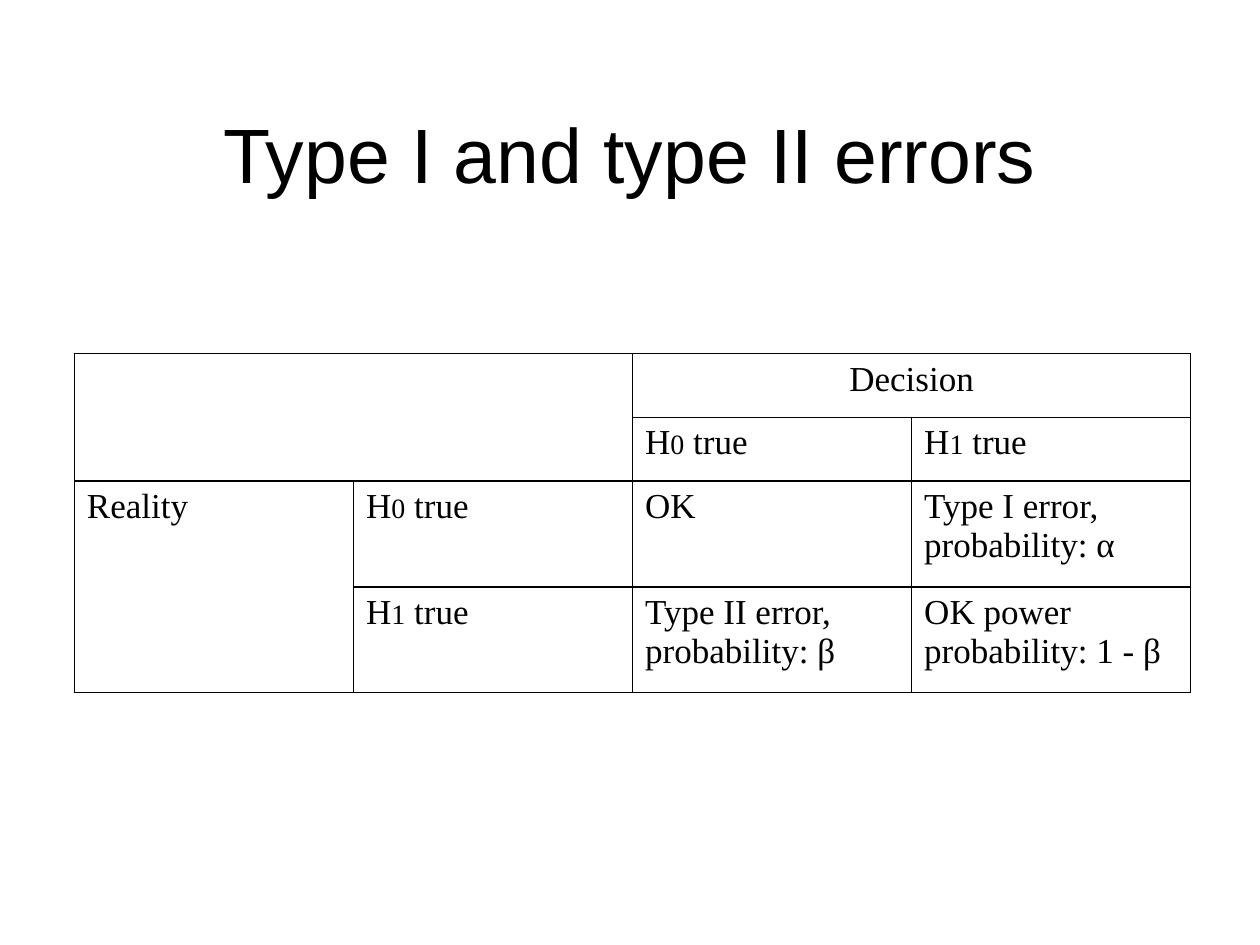
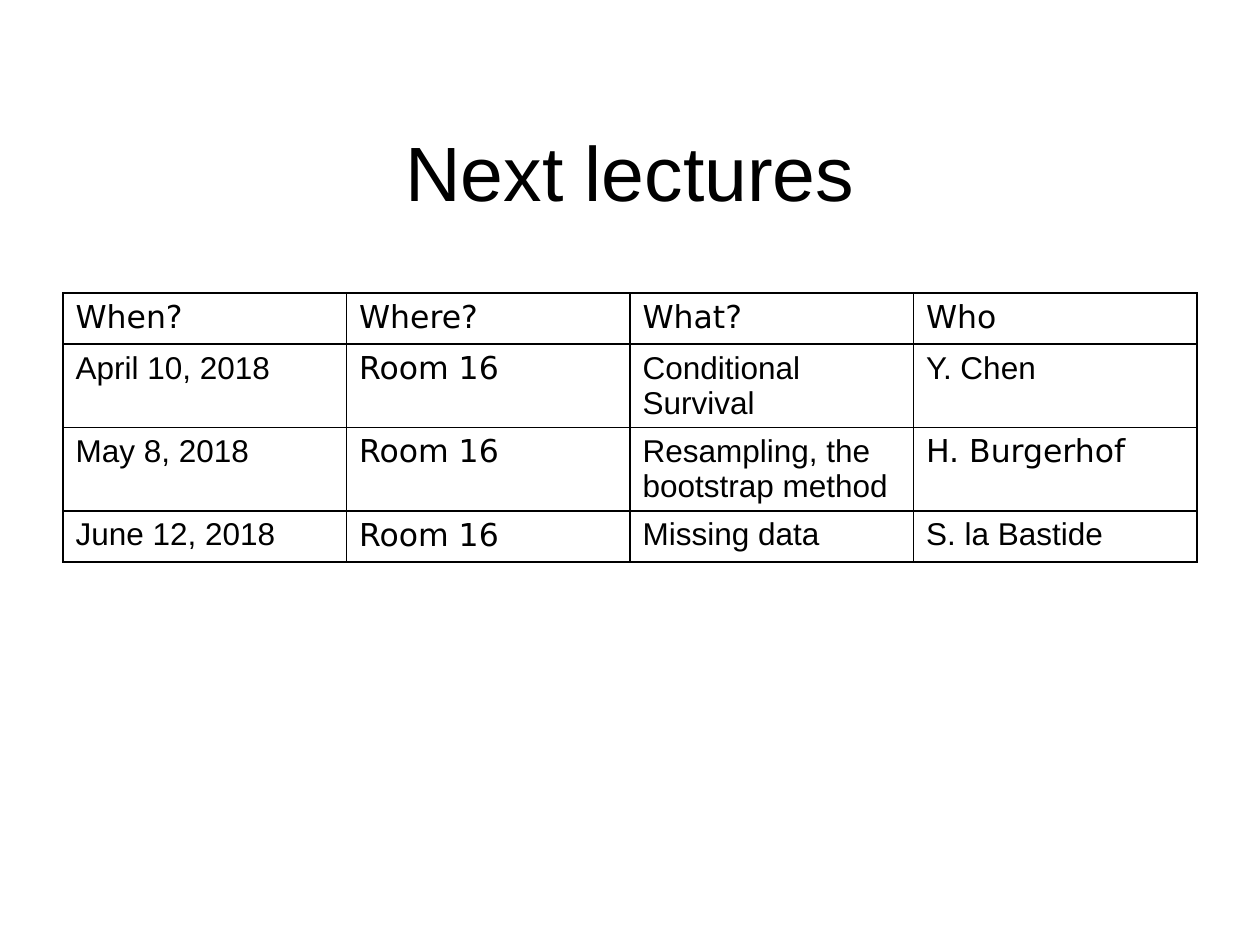
from lxml import etree
from pptx import Presentation
from pptx.dml.color import RGBColor
from pptx.enum.text import MSO_ANCHOR, PP_ALIGN
from pptx.oxml.ns import qn
from pptx.util import Pt

CENTER = PP_ALIGN.CENTER
LEFT = PP_ALIGN.LEFT
MIDDLE = MSO_ANCHOR.MIDDLE
TITLE_ONLY = 5
INK = "000000"
PAPER = "FFFFFF"
SANS, WIDE_SANS, SERIF = "Arial", "DejaVu Sans", "Times New Roman"

ERROR_ROWS = [
    ["", "", "Decision", ""],
    ["", "", "H|0| true", "H|1| true"],
    ["Reality", "H|0| true", "OK", "Type I error,\nprobability: α"],
    ["", "H|1| true", "Type II error,\nprobability: β", "OK power\nprobability: 1 - β"],
]
LECTURE_ROWS = [
    ["When?", "Where?", "What?", "Who"],
    ["April 10, 2018", "Room 16", "Conditional Survival", "Y. Chen"],
    ["May 8, 2018", "Room 16", "Resampling, the bootstrap method", "H. Burgerhof"],
    ["June 12, 2018", "Room 16", "Missing data", "S. la Bastide"],
]


def color(hex_code):
    """Turn a hex string into a colour."""
    return RGBColor.from_string(hex_code)


def style_font(font, name, size):
    """Apply the shared ink colour with a face and a size."""
    font.name = name
    font.size = Pt(size)
    font.bold = False
    font.color.rgb = color(INK)


def add_titled_slide(deck, heading, top, height, bottom_inset=3.6):
    """Add a white slide with a centred heading."""
    slide = deck.slides.add_slide(deck.slide_layouts[TITLE_ONLY])
    slide.background.fill.solid()
    slide.background.fill.fore_color.rgb = color(PAPER)
    title = slide.shapes.title
    title.left, title.top, title.width, title.height = Pt(36), Pt(top), Pt(648), Pt(height)
    frame = title.text_frame
    frame.text = heading
    frame.vertical_anchor = MIDDLE
    frame.margin_bottom = Pt(bottom_inset)
    frame.paragraphs[0].alignment = CENTER
    style_font(frame.paragraphs[0].runs[0].font, SANS, 44)
    return slide


def draw_borders(cell):
    """Rule all four sides of a cell with a thin line."""
    properties = cell._tc.get_or_add_tcPr()
    for position, side in enumerate(("a:lnL", "a:lnR", "a:lnT", "a:lnB")):
        line = etree.Element(qn(side), w=str(Pt(1)))
        fill = etree.SubElement(line, qn("a:solidFill"))
        etree.SubElement(fill, qn("a:srgbClr"), val=INK)
        properties.insert(position, line)


def write_cell(cell, text, face, size):
    """Write lines into a cell, with parts between bars set smaller."""
    frame = cell.text_frame
    for number, line in enumerate(text.split("\n")):
        paragraph = frame.add_paragraph() if number else frame.paragraphs[0]
        paragraph.alignment = LEFT
        for index, part in enumerate(line.split("|")):
            run = paragraph.add_run()
            run.text = part
            style_font(run.font, face, size - 4 * (index % 2))


def add_grid(slide, rows, left, top, width, heights, size, face_at):
    """Add a ruled, unfilled table with equal columns."""
    columns = len(rows[0])
    table = slide.shapes.add_table(
        len(rows), columns, Pt(left), Pt(top), Pt(width), Pt(sum(heights))
    ).table
    table.first_row = table.horz_banding = False
    for column in table.columns:
        column.width = Pt(width / columns)
    for row_index, (texts, height) in enumerate(zip(rows, heights)):
        table.rows[row_index].height = Pt(height)
        for column_index, text in enumerate(texts):
            cell = table.cell(row_index, column_index)
            cell.fill.background()
            draw_borders(cell)
            if text:
                write_cell(cell, text, face_at(row_index, column_index), size)
    return table


def lecture_face(row, column):
    """Choose the wide face for headings, rooms and one lecturer."""
    return WIDE_SANS if row == 0 or column == 1 or (row, column) == (2, 3) else SANS


def add_errors_slide(deck):
    """Show the decisions against reality."""
    slide = add_titled_slide(deck, "Type I and type II errors", 54.7, 72.7, 11.6)
    errors = add_grid(slide, ERROR_ROWS, 42.5, 202, 638, [36.5, 36.5, 60.4, 60.4],
                      20, lambda row, column: SERIF)
    for first, last in (((0, 0), (1, 1)), ((0, 2), (0, 3)), ((2, 0), (3, 0))):
        errors.cell(*first).merge(errors.cell(*last))
    errors.cell(0, 2).text_frame.paragraphs[0].alignment = CENTER


def add_lectures_slide(deck):
    """Show the schedule of coming lectures."""
    slide = add_titled_slide(deck, "Next lectures", 66.5, 62.6)
    add_grid(slide, LECTURE_ROWS, 36, 167.5, 648, [29.2, 47.6, 47.6, 29.2],
             18, lecture_face)


def main():
    """Build and save the deck."""
    deck = Presentation()
    deck.slide_width, deck.slide_height = Pt(720), Pt(540)
    add_errors_slide(deck)
    add_lectures_slide(deck)
    deck.save("out.pptx")


if __name__ == "__main__":
    main()
